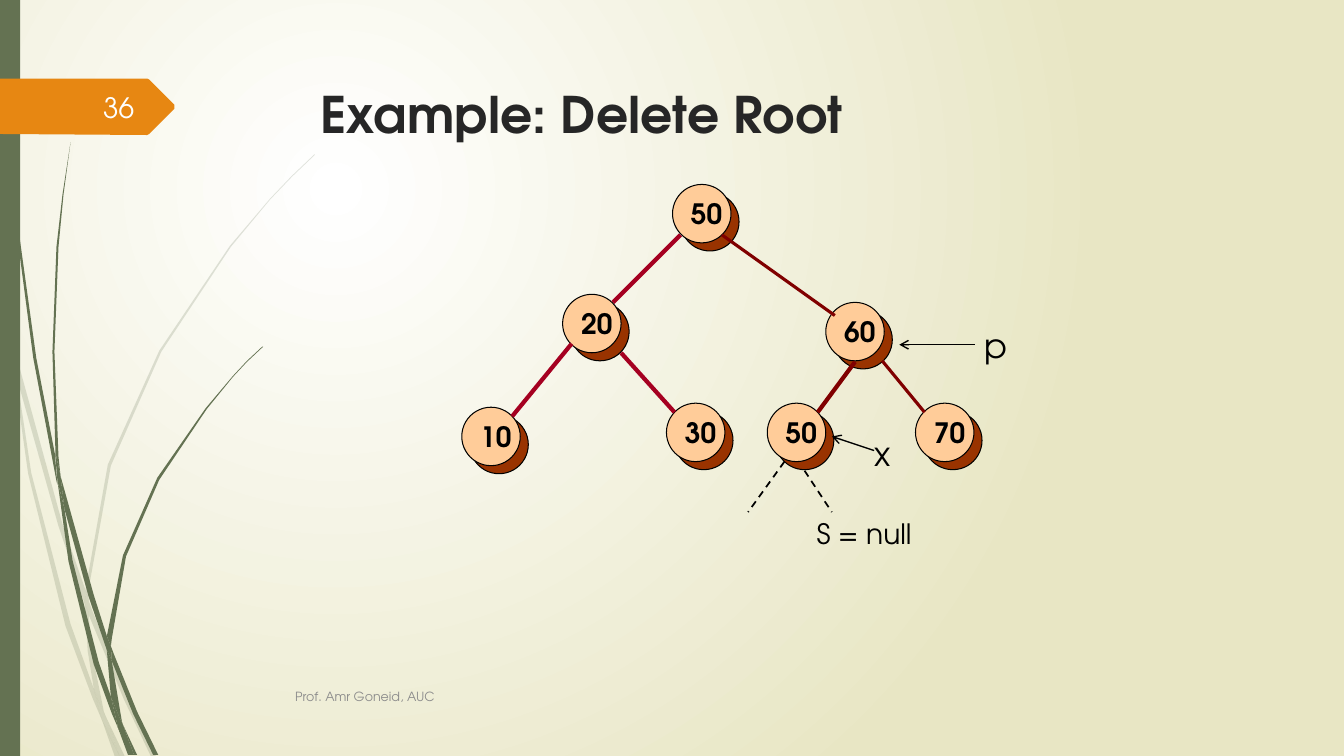
import lxml.etree
import pptx
import pptx.dml.color
import pptx.enum.dml
import pptx.enum.shapes
import pptx.enum.text
import pptx.oxml.ns
import pptx.util

Inches = pptx.util.Inches
Pt = pptx.util.Pt
RGBColor = pptx.dml.color.RGBColor
Align = pptx.enum.text.PP_ALIGN
Anchor = pptx.enum.text.MSO_ANCHOR
Shape = pptx.enum.shapes.MSO_SHAPE
qn = pptx.oxml.ns.qn
child = lxml.etree.SubElement

BLACK = RGBColor(0, 0, 0)
WHITE = RGBColor(255, 255, 255)
SAND = RGBColor(0xE8, 0xE6, 0xC4)
GREEN = RGBColor(0x64, 0x72, 0x52)
ORANGE = RGBColor(0xE7, 0x87, 0x12)
INK = RGBColor(0x26, 0x26, 0x26)
GRAY = RGBColor(0x8C, 0x8C, 0x8C)
PALE = RGBColor(0xFE, 0xFF, 0xFF)
RUST = RGBColor(0x99, 0x33, 0)
PEACH = RGBColor(0xFF, 0xCC, 0x99)
RED = RGBColor(0xA5, 0, 0x21)
MAROON = RGBColor(0x80, 0, 0)

FAINT = [
    (11, 350, 9, 322, 0, 282, 0, 299, 10, 344),
    (58, 522, 84, 599, 85, 586, 62, 520, 14, 345, 17, 376),
    (92, 607, 88, 596, 88, 610, 123, 694, 150, 751, 155, 751, 127, 692),
    (119, 751, 124, 751, 105, 711),
    (93, 683, 70, 619, 31, 469, 17, 376, 11, 350, 28, 470, 65, 621, 92, 693,
     101, 714, 99, 707),
    (84, 599, 87, 646, 93, 683, 96, 692, 105, 711, 103, 706, 91, 646, 88, 610,
     88, 608),
    (88, 584, 110, 462, 160, 349, 229, 245, 268, 198, 290, 175, 312, 154,
     312, 153, 289, 175, 268, 197, 228, 244, 158, 348, 107, 461, 85, 584,
     85, 586, 88, 596),
    (101, 714, 114, 751, 119, 751),
    (88, 608, 88, 610, 88, 596, 85, 586, 84, 599),
    (96, 692, 93, 683, 99, 707, 101, 714, 119, 751, 105, 711),
]
BOLD = [
    (7, 110, 17, 233, 33, 355, 56, 477, 57, 481, 55, 457, 55, 453, 36, 355,
     19, 232, 8, 109, 5, 48, 4, 0, 3, 0, 4, 48),
    (88, 592, 106, 645, 106, 633, 106, 631, 93, 590, 60, 472, 64, 505),
    (113, 649, 110, 641, 111, 656, 132, 708, 152, 749, 157, 749, 136, 706),
    (110, 691, 98, 657, 72, 556, 64, 505, 57, 477, 68, 557, 93, 659, 111, 708,
     117, 722, 116, 717),
    (60, 472, 58, 453, 54, 349, 58, 245, 63, 193, 70, 141, 62, 193, 56, 245,
     52, 349, 55, 449),
    (133, 749, 136, 749, 122, 719),
    (57, 477, 64, 505, 60, 472, 55, 449, 55, 453),
    (111, 633, 125, 552, 158, 476, 205, 406, 231, 374, 245, 359, 261, 344,
     260, 344, 245, 358, 231, 373, 204, 405, 156, 474, 122, 551, 106, 631,
     110, 641),
    (117, 722, 127, 749, 131, 749),
    (106, 645, 110, 691, 116, 706, 122, 719, 121, 716, 111, 656, 109, 651),
    (106, 645, 109, 651, 111, 656, 110, 641, 106, 631, 106, 633),
    (116, 706, 110, 691, 116, 717, 117, 722, 130, 749, 133, 749, 122, 719),
]
TAG = (0, 78, 146, 78, 148, 79, 173, 104, 173, 108, 148, 133, 146, 134, 0, 133)

NODES = [
    ("50", 6.67, 1.83), ("20", 5.58, 2.92), ("10", 4.58, 4.04),
    ("30", 6.61, 4), ("60", 8.19, 3), ("50", 7.61, 4), ("70", 9.08, 4),
]
EDGES = [
    (6.75, 2.33, 6.08, 3, RED, 3), (6.16, 3.5, 6.69, 4.09, RED, 3),
    (5.67, 3.41, 5.08, 4.13, RED, 3), (8.48, 3.59, 8.11, 4.09, MAROON, 3),
    (7.16, 2.33, 8.28, 3.13, MAROON, 2.25),
    (8.75, 3.58, 9.17, 4.09, MAROON, 2.25),
]


class Deck:
    face = "TeX Gyre Adventor"
    size = 0.58
    drop = 0.08

    def __init__(self, deck):
        self.slide = deck.slides.add_slide(deck.slide_layouts[5])
        self.shapes = self.slide.shapes

    def back(self):
        fill = self.slide.background.fill
        fill.gradient()
        for stop, color in zip(fill.gradient_stops, (WHITE, SAND)):
            stop.color.rgb = color
        grad = self.slide.element.find(".//" + qn("a:gradFill"))
        grad.remove(grad.find(qn("a:lin")))
        ring = child(grad, qn("a:path"), {"path": "circle"})
        child(ring, qn("a:fillToRect"), l="50000", t="50000", r="100000", b="100000")

    def paint(self, shape, color, line=None):
        shape.shadow.inherit = False
        shape.fill.solid()
        shape.fill.fore_color.rgb = color
        if line is None:
            shape.line.fill.background()
        else:
            shape.line.color.rgb = line
            shape.line.width = Pt(0.75)

    def form(self, shapes, flat, color, alpha=None):
        points = list(zip(flat[::2], flat[1::2]))
        pen = shapes.build_freeform(*points[0], scale=Inches(0.01))
        pen.add_line_segments(points[1:], close=True)
        shape = pen.convert_to_shape()
        self.paint(shape, color)
        if alpha:
            tint = shape.element.spPr.find(".//" + qn("a:srgbClr"))
            child(tint, qn("a:alpha"), val=str(alpha * 1000))

    def grass(self, blades, alpha=None):
        group = self.shapes.add_group_shape()
        for blade in blades:
            self.form(group.shapes, blade, GREEN, alpha)

    def fit(self, frame, text, size, color, bold=False, align=Align.LEFT,
            anchor=Anchor.TOP, wrap=True):
        frame.text = text
        frame.word_wrap = wrap
        frame.vertical_anchor = anchor
        frame.auto_size = pptx.enum.text.MSO_AUTO_SIZE.NONE
        line = frame.paragraphs[0]
        line.alignment = align
        line.font.name = self.face
        line.font.size = Pt(size)
        line.font.bold = bold
        line.font.color.rgb = color

    def title(self, text, box):
        shape = self.shapes.title
        shape.left, shape.top, shape.width, shape.height = map(Inches, box)
        self.fit(shape.text_frame, text, 36, INK, bold=True)

    def label(self, text, box, size, color=BLACK, **style):
        shape = self.shapes.add_textbox(*map(Inches, box))
        self.fit(shape.text_frame, text, size, color, **style)

    def node(self, text, x, y):
        group = self.shapes.add_group_shape()
        for shift, color in ((self.drop, RUST), (0, PEACH)):
            disc = group.shapes.add_shape(
                Shape.OVAL, Inches(x + shift), Inches(y + shift),
                Inches(self.size), Inches(self.size))
            self.paint(disc, color, BLACK)
        self.fit(disc.text_frame, text, 20, BLACK, bold=True,
                 anchor=Anchor.MIDDLE, wrap=False)

    def line(self, x1, y1, x2, y2, color=BLACK, width=1, dash=False, head=False):
        link = self.shapes.add_connector(
            pptx.enum.shapes.MSO_CONNECTOR.STRAIGHT,
            *map(Inches, (x1, y1, x2, y2)))
        link.line.color.rgb = color
        link.line.width = Pt(width)
        if dash:
            link.line.dash_style = pptx.enum.dml.MSO_LINE.DASH
        props = link.element.spPr
        if head:
            child(props.find(qn("a:ln")), qn("a:tailEnd"), type="arrow")
        child(props, qn("a:effectLst"))


def main():
    deck = pptx.Presentation()
    deck.slide_width, deck.slide_height = Inches(13.33), Inches(7.5)
    page = Deck(deck)
    page.back()
    page.grass(FAINT, 20)
    page.grass(BOLD)
    bar = page.shapes.add_shape(Shape.RECTANGLE, 0, 0, Inches(0.2), Inches(7.5))
    page.paint(bar, GREEN)
    page.form(page.shapes, TAG, ORANGE)
    page.title("Example: Delete Root", (3.08, 0.77, 8.5, 0.92))
    page.label("Prof. Amr Goneid, AUC", (2.83, 6.71, 8.33, 0.4), 9, GRAY,
               anchor=Anchor.MIDDLE)
    page.label("36", (0.58, 0.86, 0.85, 0.4), 20, PALE, align=Align.RIGHT,
               anchor=Anchor.MIDDLE)
    for node in NODES:
        page.node(*node)
    for edge in EDGES:
        page.line(*edge)
    page.label("p", (9.67, 3.17, 0.43, 0.5), 24, wrap=False)
    page.line(9.67, 3.42, 8.92, 3.42, head=True)
    page.label("x", (8.58, 4.25, 0.5, 0.5), 24)
    page.line(8.67, 4.47, 8.25, 4.33, head=True)
    page.line(7.78, 4.58, 7.42, 5.08, width=1.25, dash=True)
    page.line(7.98, 4.67, 8.25, 5.08, width=1.25, dash=True)
    page.label("S = null", (8, 5.08, 1.15, 0.44), 20, wrap=False)
    deck.save("out.pptx")


if __name__ == "__main__":
    main()
